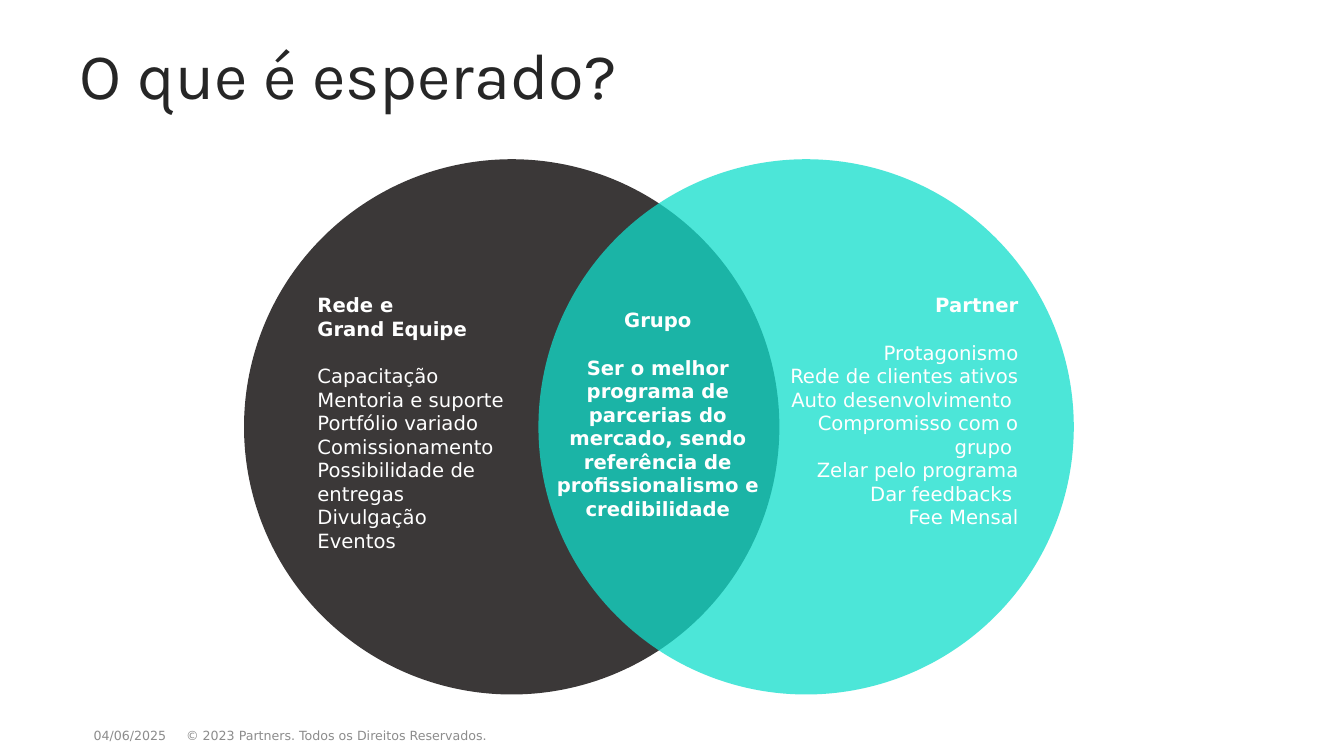
from lxml.etree import SubElement
from pptx import Presentation
from pptx.dml.color import RGBColor
from pptx.enum.shapes import MSO_SHAPE
from pptx.enum.text import MSO_ANCHOR, MSO_AUTO_SIZE, PP_ALIGN
from pptx.oxml.ns import qn
from pptx.util import Inches, Pt

COLORS = {"dark": "3B3838", "teal": "11DECC", "white": "FFFFFF",
          "title": "262626", "gray": "8C8C8C"}
WIDE, HIGH = 13.33, 7.5
LEFT, MID, RIGHT = PP_ALIGN.LEFT, PP_ALIGN.CENTER, PP_ALIGN.RIGHT


def color(name):
    """Return the named palette colour."""
    return RGBColor.from_string(COLORS[name])


def place(shape, box):
    """Move a shape into a box given in inches."""
    shape.left, shape.top, shape.width, shape.height = map(Inches, box)


def write(frame, text, size=14, font="DejaVu Sans", ink="white", bold=False,
          align=LEFT, before=0, line=None):
    """Add one formatted paragraph to a text frame."""
    first = frame.paragraphs[0]
    para = first if not first.runs else frame.add_paragraph()
    para.alignment = align
    para.space_before = Pt(before)
    if line:
        para.line_spacing = Pt(line)
    run = para.add_run()
    run.text = text
    run.font.size, run.font.name, run.font.bold = Pt(size), font, bold
    run.font.color.rgb = color(ink)


def frame_in(slide, box, anchor=MSO_ANCHOR.TOP):
    """Add a wrapping text box and return its frame."""
    frame = slide.shapes.add_textbox(*map(Inches, box)).text_frame
    frame.word_wrap = True
    frame.vertical_anchor = anchor
    return frame


def head(slide, box):
    """Fill the title placeholder."""
    title = slide.shapes.title
    place(title, box)
    frame = title.text_frame
    frame.auto_size = MSO_AUTO_SIZE.NONE
    frame.vertical_anchor = MSO_ANCHOR.TOP
    frame.margin_left = frame.margin_right = 0
    frame.margin_top = frame.margin_bottom = 0
    write(frame, "O que é esperado?", size=46.5, font="Karla", ink="title", line=41)


def circle(slide, box, fill, alpha=100):
    """Draw one borderless circle with the given opacity."""
    disc = slide.shapes.add_shape(MSO_SHAPE.OVAL, *map(Inches, box))
    disc.shadow.inherit = False
    disc.fill.solid()
    disc.fill.fore_color.rgb = color(fill)
    disc.line.fill.background()
    if alpha < 100:
        tone = disc.fill._xPr.find(qn("a:solidFill"))[0]
        SubElement(tone, qn("a:alpha"), val=str(alpha * 1000))


def column(slide, box, heads, items, align, bold=False):
    """Write bold heading lines, a gap and a list of items."""
    frame = frame_in(slide, box)
    for text in heads:
        write(frame, text, bold=True, align=align)
    for index, text in enumerate(items):
        write(frame, text, bold=bold, align=align, before=0 if index else 17)


def venn(slide, box):
    """Draw the two overlapping circles and their three texts."""
    left, top, width, size = box
    circle(slide, (left, top, size, size), "dark")
    circle(slide, (left + width - size, top, size, size), "teal", 75)
    inset, wide, drop = 0.63, 2.56, 1.28
    column(slide, (left + inset, top + drop, wide, 2.69),
           ["Rede e", "Grand Equipe"],
           ["Capacitação", "Mentoria e suporte", "Portfólio variado",
            "Comissionamento", "Possibilidade de entregas", "Divulgação",
            "Eventos"], LEFT)
    column(slide, (left + width - 0.45 - wide, top + drop, wide, 2.46),
           ["Partner"],
           ["Protagonismo", "Rede de clientes ativos", "Auto desenvolvimento ",
            "Compromisso com o grupo ", "Zelar pelo programa",
            "Dar feedbacks ", "Fee Mensal"], RIGHT)
    column(slide, (left + 2.97, top + 1.43, 2.27, 2.22), ["Grupo"],
           ["Ser o melhor programa de parcerias do mercado, sendo "
            "referência de profissionalismo e credibilidade"], MID, bold=True)


def foot(slide, box):
    """Write the date and the copyright line."""
    left, top, width, height = box
    split = 0.83
    for text, start, wide, align in (
            ("04/06/2025", 0, 0.96, LEFT),
            ("© 2023 Partners. Todos os Direitos Reservados.",
             split, width - split, MID)):
        frame = frame_in(slide, (left + start, top, wide, height), MSO_ANCHOR.MIDDLE)
        write(frame, text, size=9, ink="gray", align=align)


def main():
    """Build and save the slide."""
    deck = Presentation()
    deck.slide_width, deck.slide_height = Inches(WIDE), Inches(HIGH)
    slide = deck.slides.add_slide(deck.slide_layouts[5])
    head(slide, (0.79, 0.55, 8.58, 0.6))
    venn(slide, (2.42, 1.58, 8.23, 5.31))
    foot(slide, (0.83, 7.1, 4.18, 0.4))
    deck.save("out.pptx")


if __name__ == "__main__":
    main()
